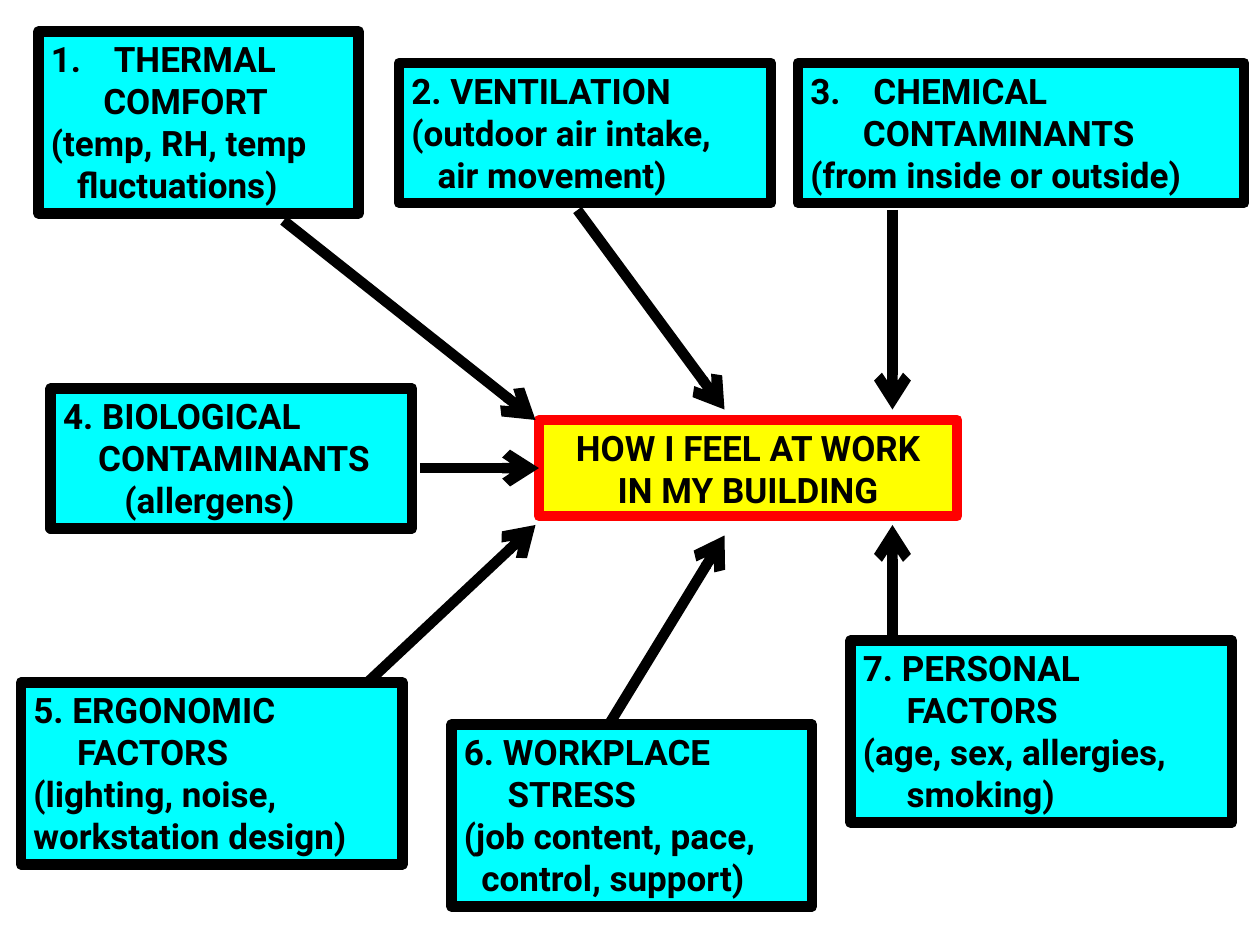
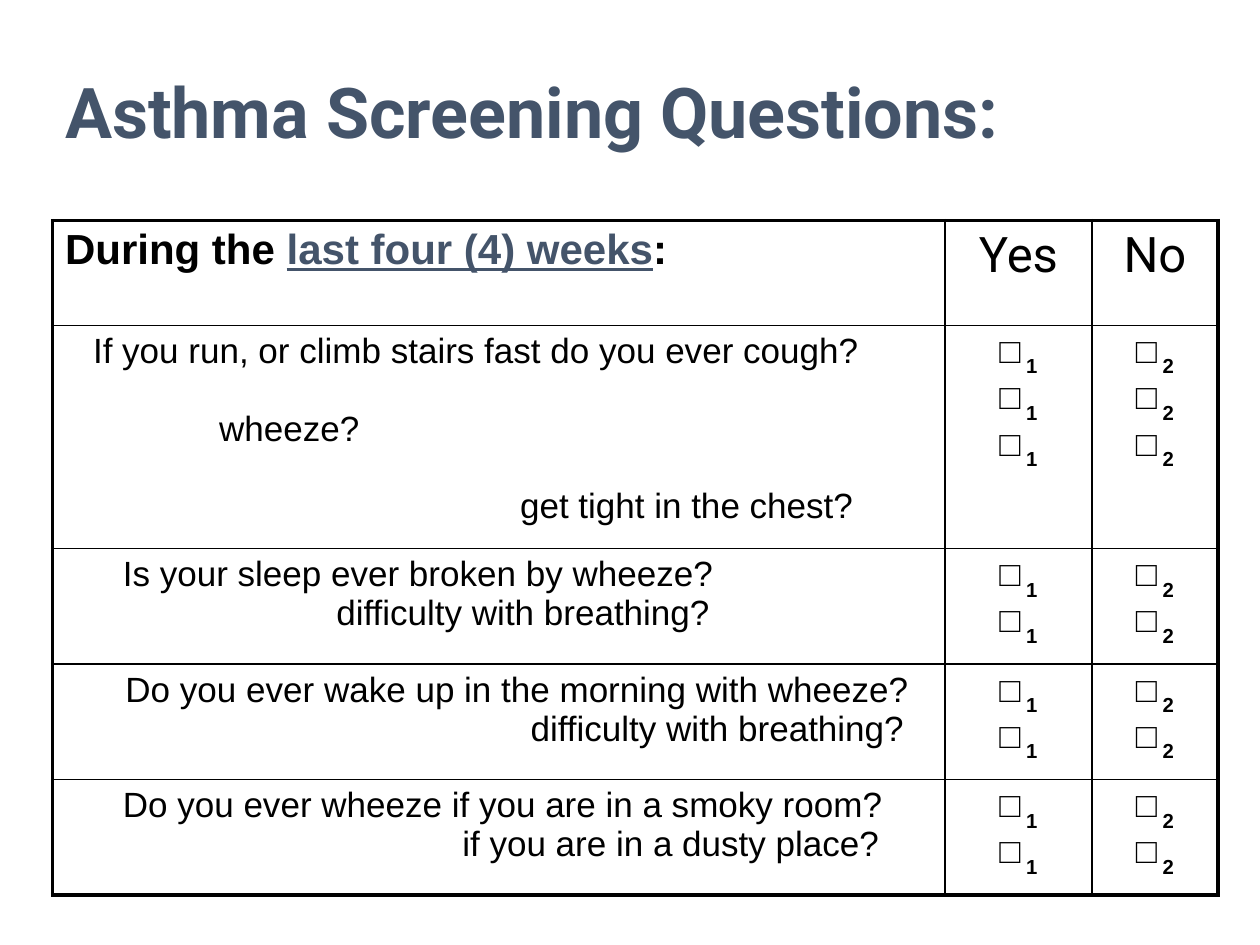
from lxml import etree
from pptx import Presentation
from pptx.dml.color import RGBColor
from pptx.enum.shapes import MSO_CONNECTOR, MSO_SHAPE
from pptx.enum.text import MSO_ANCHOR, PP_ALIGN
from pptx.oxml.ns import qn
from pptx.util import Pt

RECT = MSO_SHAPE.RECTANGLE
LINE = MSO_CONNECTOR.STRAIGHT
TOP, MIDDLE = MSO_ANCHOR.TOP, MSO_ANCHOR.MIDDLE
LEFT, CENTER = PP_ALIGN.LEFT, PP_ALIGN.CENTER
HEAD, BODY = "Roboto", "Arial"
COLORS = {"ink": "000000", "hub": "FFFF00", "rim": "FF0000",
          "cause": "00FFFF", "slate": "44546A"}

HUB = (308, 240, 239, 55)
CAUSES = [
    ((22, 18, 183, 104), (162, 126), (306, 240), 1,
     [("THERMAL", 36), ("COMFORT", 30), ("(temp, RH, temp", 0), ("fluctuations)", 15)]),
    ((228, 36, 212.5, 80), (330, 120), (414, 234), None,
     [("2. VENTILATION", 0), ("(outdoor air intake,", 0), ("air movement)", 15)]),
    ((456, 36, 255, 80), (510, 120), (510, 234), 3,
     [("CHEMICAL", 36), ("CONTAMINANTS", 30), ("(from inside or outside)", 0)]),
    ((29, 222, 206.5, 80), (240, 267.5), None, None,
     [("4. BIOLOGICAL", 0), ("CONTAMINANTS", 20), ("(allergens)", 35)]),
    ((12, 390, 218, 104), (210, 390), (306, 300), None,
     [("5. ERGONOMIC", 0), ("FACTORS", 25), ("(lighting, noise,", 0),
      ("workstation design)", 0)]),
    ((258, 414, 206, 104), (348, 414), (414, 306), None,
     [("6. WORKPLACE", 0), ("STRESS", 25), ("(job content, pace,", 0),
      ("control, support)", 10)]),
    ((486, 366, 218, 104), (510, 366), (510, 300), None,
     [("7. PERSONAL", 0), ("FACTORS", 25), ("(age, sex, allergies,", 0),
      ("smoking)", 25)]),
]

WIDTHS = (510, 84, 72)
HEIGHTS = (60, 127.5, 66, 66, 66)
ASKS = [
    (22, [("If you run, or climb stairs fast do you ever cough?", 16),
          ("wheeze?", 88), ("get tight in the chest?", 260)]),
    (0, [("Is your sleep ever broken by wheeze?", 33),
         ("difficulty with breathing?", 155)]),
    (0, [("Do you ever wake up in the morning with wheeze?", 34.5),
         ("difficulty with breathing?", 266)]),
    (0, [("Do you ever wheeze if you are in a smoky room?", 33),
         ("if you are in a dusty place?", 227)]),
]


def rgb(name):
    return RGBColor.from_string(COLORS[name])


def style(run, size, font=BODY, bold=False, color="ink"):
    run.font.size = Pt(size)
    run.font.name = font
    run.font.bold = bold
    run.font.color.rgb = rgb(color)


def write(frame, lines, size, font, bold=False, align=LEFT, gap=0):
    frame.text = "\n".join(text for text, _ in lines)
    for i, (para, (_, indent)) in enumerate(zip(frame.paragraphs, lines)):
        para.alignment = align
        props = para._p.get_or_add_pPr()
        props.set("marL", str(Pt(indent)))
        props.set("indent", "0")
        if i and gap:
            para.space_before = Pt(gap)
        for run in para.runs:
            style(run, size, font, bold)


def number(para, start):
    props = para._p.get_or_add_pPr()
    props.set("indent", str(Pt(-36)))
    etree.SubElement(props, qn("a:buAutoNum"), type="arabicPeriod", startAt=str(start))


def add_box(slide, place, lines, fill, edge, align=LEFT):
    box = slide.shapes.add_shape(RECT, *map(Pt, place))
    box.shadow.inherit = False
    box.fill.solid()
    box.fill.fore_color.rgb = rgb(fill)
    box.line.color.rgb = rgb(edge)
    box.line.width = Pt(6)
    box.text_frame.word_wrap = True
    box.text_frame.vertical_anchor = TOP
    write(box.text_frame, lines, 20, HEAD, True, align)
    return box


def add_arrow(slide, start, end, hub):
    arrow = slide.shapes.add_connector(LINE, *map(Pt, start + (end or start)))
    if end is None:
        arrow.end_connect(hub, 1)
    arrow.line.color.rgb = rgb("ink")
    arrow.line.width = Pt(6)
    etree.SubElement(arrow.line._get_or_add_ln(), qn("a:tailEnd"), type="arrow")
    etree.SubElement(arrow._element.spPr, qn("a:effectLst"))


def edge_cell(cell, row, col):
    outer = {"L": col == 0, "R": col == len(WIDTHS) - 1,
             "T": row == 0, "B": row == len(HEIGHTS) - 1}
    props = cell._tc.get_or_add_tcPr()
    for side, thick in outer.items():
        line = etree.SubElement(props, qn("a:ln" + side), w=str(Pt(2.25 if thick else 1)))
        fill = etree.SubElement(line, qn("a:solidFill"))
        etree.SubElement(fill, qn("a:srgbClr"), val=COLORS["ink"])
    cell.fill.background()


def tick(cell, digit, count):
    frame = cell.text_frame
    frame.text = "\n".join(["□"] * count)
    for para in frame.paragraphs:
        para.alignment = CENTER
        mark = para.add_run()
        mark.text = f" {digit}"
        for run in para.runs:
            style(run, 20, bold=True)
        mark.font._element.set("baseline", "-30000")


def add_heads(table):
    para = table.cell(0, 0).text_frame.paragraphs[0]
    for text, color in (("During the ", "ink"), ("last four (4) weeks", "slate"), (":", "ink")):
        run = para.add_run()
        run.text = text
        style(run, 24, bold=True, color=color)
        run.font.underline = color == "slate"
    for col, text in enumerate(("Yes", "No"), 1):
        write(table.cell(0, col).text_frame, [(text, 0)], 28, HEAD, align=CENTER)


def add_form(slide):
    place = (30, 126, sum(WIDTHS), sum(HEIGHTS))
    table = slide.shapes.add_table(len(HEIGHTS), len(WIDTHS), *map(Pt, place)).table
    table.first_row = table.horz_banding = False
    for col, width in zip(table.columns, WIDTHS):
        col.width = Pt(width)
    for row, height in zip(table.rows, HEIGHTS):
        row.height = Pt(height)
    add_heads(table)
    for row, (gap, lines) in enumerate(ASKS, 1):
        write(table.cell(row, 0).text_frame, lines, 20, BODY, gap=gap)
        for digit in (1, 2):
            tick(table.cell(row, digit), digit, len(lines))
    for row in range(len(HEIGHTS)):
        for col in range(len(WIDTHS)):
            edge_cell(table.cell(row, col), row, col)


def add_title(slide, text):
    title = slide.shapes.title
    title.left, title.top, title.width, title.height = map(Pt, (30, 18, 636, 90))
    title.text_frame.text = text
    title.text_frame.vertical_anchor = MIDDLE
    para = title.text_frame.paragraphs[0]
    para.alignment = LEFT
    style(para.runs[0], 40, HEAD, True, "slate")


def draw_map(slide):
    lines = [("HOW I FEEL AT WORK", 0), ("IN MY BUILDING", 0)]
    hub = add_box(slide, HUB, lines, "hub", "rim", CENTER)
    for place, start, end, count, lines in CAUSES:
        box = add_box(slide, place, lines, "cause", "ink")
        if count:
            number(box.text_frame.paragraphs[0], count)
        add_arrow(slide, start, end, hub)


def main():
    deck = Presentation()
    deck.slide_width, deck.slide_height = Pt(720), Pt(540)
    draw_map(deck.slides.add_slide(deck.slide_layouts[6]))
    form = deck.slides.add_slide(deck.slide_layouts[5])
    add_form(form)
    add_title(form, "Asthma Screening Questions:")
    deck.save("out.pptx")


if __name__ == "__main__":
    main()
